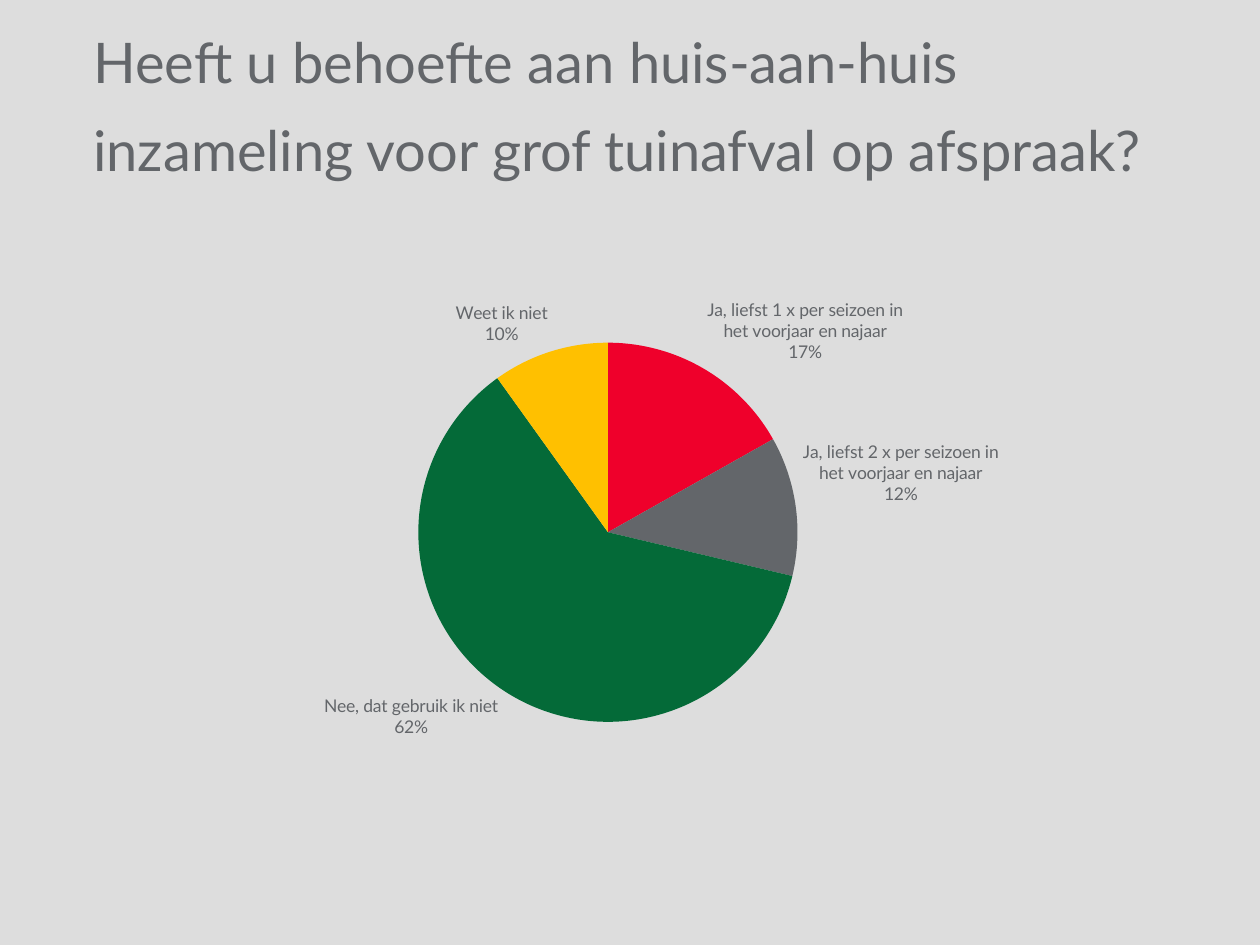
"""Build the survey slide on door-to-door collection of garden waste."""
from dataclasses import dataclass

from lxml import etree
from pptx import Presentation, util as u
from pptx.chart.data import CategoryChartData
from pptx.dml.color import RGBColor
from pptx.enum import chart as c, text as t

COLUMNS, ROWS = 100, 75


@dataclass(frozen=True)
class Theme:
    """Colours, font and type sizes of the slide."""
    background: str = "DDDDDD"
    ink: str = "63666A"
    red: str = "EF002B"
    green: str = "046A38"
    yellow: str = "FFC000"
    font: str = "Lato"
    title_size: int = 32
    title_leading: int = 50
    label_size: int = 10


@dataclass(frozen=True)
class Area:
    """A rectangle in grid columns and rows."""
    left: float
    top: float
    width: float
    height: float


@dataclass(frozen=True)
class Answer:
    """One survey answer with its share and slice colour."""
    label: str
    share: float
    color: str


THEME = Theme()
TITLE = Area(7.4, 7.1, 83.8, 7.8)
CHART = Area(5.9, 21.5, 89, 39.6)
PIE = Area(33.2, 27.2, 30.1, 30.1)
ANSWERS = (
    Answer("Ja, liefst 1 x per seizoen in het voorjaar en najaar", 0.17, THEME.red),
    Answer("Ja, liefst 2 x per seizoen in het voorjaar en najaar", 0.12, THEME.ink),
    Answer("Nee, dat gebruik ik niet", 0.62, THEME.green),
    Answer("Weet ik niet", 0.1, THEME.yellow),
)


def grid_lengths(presentation, area: Area) -> tuple:
    """Convert a grid area to left, top, width and height lengths."""
    column = presentation.slide_width / COLUMNS
    row = presentation.slide_height / ROWS
    return (u.Emu(round(area.left * column)), u.Emu(round(area.top * row)),
            u.Emu(round(area.width * column)), u.Emu(round(area.height * row)))


def format_font(font, size: int, color: str = THEME.ink) -> None:
    """Apply the theme font with a size and colour."""
    font.name = THEME.font
    font.size = u.Pt(size)
    font.bold = False
    font.color.rgb = RGBColor.from_string(color)


def write_text(shape, content: str, *, size: int, leading: int, bottom: int) -> None:
    """Write left-aligned text in the middle of a shape, above a bottom inset."""
    frame = shape.text_frame
    frame.word_wrap = True
    frame.auto_size = t.MSO_AUTO_SIZE.NONE
    frame.vertical_anchor = t.MSO_ANCHOR.MIDDLE
    frame.margin_left = frame.margin_top = frame.margin_right = 0
    frame.margin_bottom = u.Pt(bottom)
    paragraph = frame.paragraphs[0]
    paragraph.alignment = t.PP_ALIGN.LEFT
    paragraph.line_spacing = u.Pt(leading)
    run = paragraph.add_run()
    run.text = content
    format_font(run.font, size)


def place_plot(chart, frame: Area, plot: Area) -> None:
    """Fix the inner plot area at its place within the chart frame."""
    namespace = chart.element.nsmap["c"]
    plot_area = chart.element.chart.plotArea
    for old in plot_area.findall(f"{{{namespace}}}layout"):
        plot_area.remove(old)
    layout = etree.Element(f"{{{namespace}}}layout")
    manual = etree.SubElement(layout, f"{{{namespace}}}manualLayout")
    settings = {
        "layoutTarget": "inner", "xMode": "edge", "yMode": "edge",
        "x": (plot.left - frame.left) / frame.width,
        "y": (plot.top - frame.top) / frame.height,
        "w": plot.width / frame.width,
        "h": plot.height / frame.height,
    }
    for name, value in settings.items():
        etree.SubElement(manual, f"{{{namespace}}}{name}", val=str(value))
    plot_area.insert(0, layout)


def add_pie(presentation, slide, answers: tuple[Answer, ...]) -> None:
    """Add the pie chart with a label outside each slice."""
    data = CategoryChartData(number_format="0%")
    data.categories = [answer.label for answer in answers]
    data.add_series("Series 1", [answer.share for answer in answers])
    chart = slide.shapes.add_chart(
        c.XL_CHART_TYPE.PIE, *grid_lengths(presentation, CHART), data).chart
    chart.has_title = False
    chart.has_legend = False
    format_font(chart.font, THEME.label_size)
    place_plot(chart, CHART, PIE)
    plot = chart.plots[0]
    plot.vary_by_categories = True
    series = plot.series[0]
    for index, answer in enumerate(answers):
        fill = series.points[index].format.fill
        fill.solid()
        fill.fore_color.rgb = RGBColor.from_string(answer.color)
    labels = series.data_labels
    format_font(labels.font, THEME.label_size)
    labels.number_format = "0%"
    labels.number_format_is_linked = False
    labels.position = c.XL_LABEL_POSITION.OUTSIDE_END
    labels.show_category_name = True
    labels.show_value = True
    labels.show_percentage = False
    labels.show_legend_key = False
    element = series.points[0].format.fill and labels._element
    namespace = chart.element.nsmap["c"]
    separator = etree.Element(f"{{{namespace}}}separator")
    separator.text = "\n"
    element.find(f"{{{namespace}}}showBubbleSize").addnext(separator)


def main() -> None:
    """Create the presentation and save it."""
    presentation = Presentation()
    presentation.slide_width, presentation.slide_height = u.Inches(10), u.Inches(7.5)
    slide = presentation.slides.add_slide(presentation.slide_layouts[0])
    slide.background.fill.solid()
    slide.background.fill.fore_color.rgb = RGBColor.from_string(THEME.background)
    subtitle = slide.placeholders[1].element
    subtitle.getparent().remove(subtitle)
    title = slide.shapes.title
    title.left, title.top, title.width, title.height = grid_lengths(presentation, TITLE)
    write_text(title, "Heeft u behoefte aan huis-aan-huis inzameling voor grof tuinafval op afspraak?",
               size=THEME.title_size, leading=THEME.title_leading, bottom=THEME.title_leading)
    add_pie(presentation, slide, ANSWERS)


    presentation.save("out.pptx")


if __name__ == "__main__":
    main()
